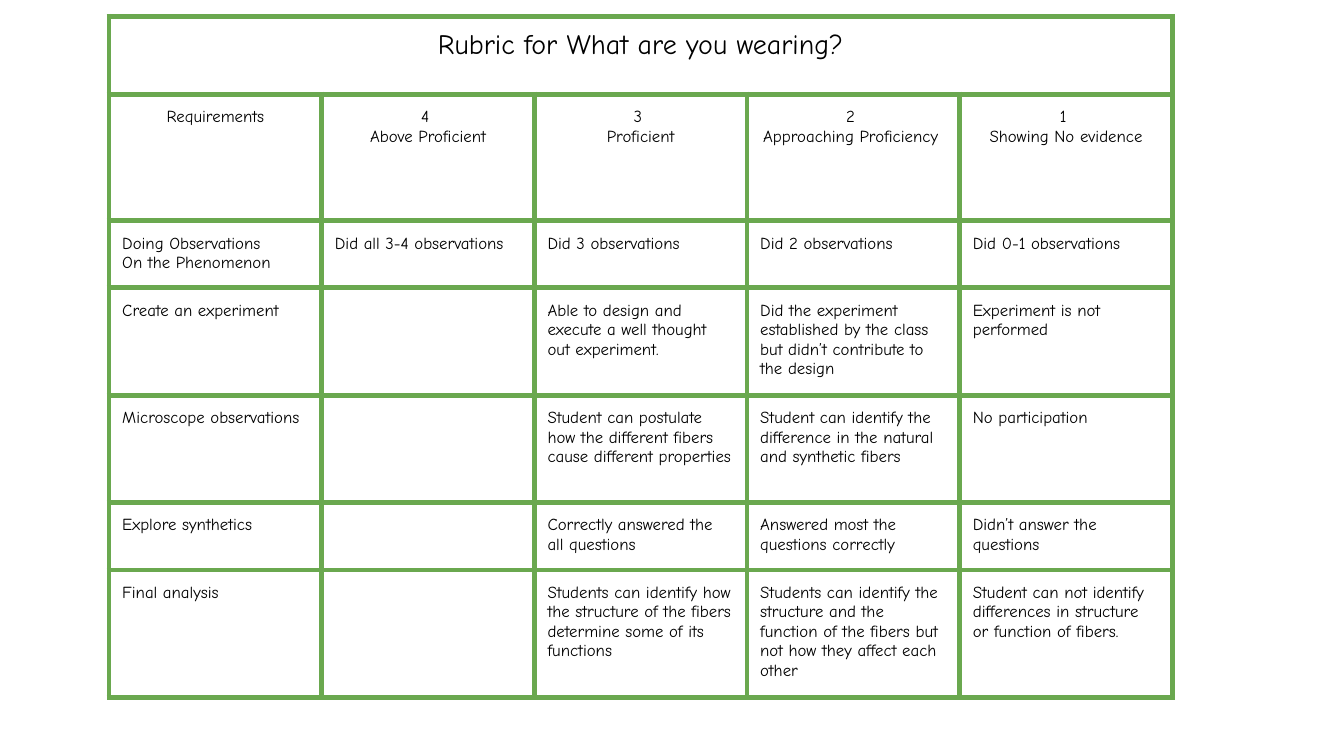
from dataclasses import dataclass

from lxml.etree import SubElement
from pptx import Presentation
from pptx.dml.color import RGBColor
from pptx.enum.text import PP_ALIGN
from pptx.oxml import parse_xml
from pptx.oxml.ns import nsdecls, qn
from pptx.util import Cm, Pt


@dataclass(frozen=True)
class Theme:
    font: str = "Comic Neue"
    ink: str = "000000"
    line: str = "6AA84F"
    width: int = Pt(3)
    title: int = 15
    body: int = 9
    inset: int = Cm(0.25)


TITLE = "Rubric for What are you wearing?"
HEADS = [
    "Requirements",
    "4 \nAbove Proficient",
    "3 \nProficient",
    "2 \nApproaching Proficiency ",
    "1 \nShowing No evidence",
]
ROWS = [
    ["Doing Observations\nOn the Phenomenon", "Did all 3-4 observations",
     "Did 3 observations", "Did 2 observations", "Did 0-1 observations"],
    ["Create an experiment", "",
     "Able to design and execute a well thought out experiment.",
     "Did the experiment established by the class but didn’t contribute to the design",
     "Experiment is not performed"],
    ["Microscope observations", "",
     "Student can postulate how the different fibers cause different properties",
     "Student can identify the difference in the natural and synthetic fibers",
     "No participation"],
    ["Explore synthetics", "",
     "Correctly answered the all questions",
     "Answered most the questions correctly",
     "Didn’t answer the questions"],
    ["Final analysis", "",
     "Students can identify how the structure of the fibers determine some of its functions",
     "Students can identify the structure and the function of the fibers but not how they affect each other",
     "Student can not identify differences in structure or function of fibers."],
]
HEIGHTS = [1.47, 2.39, 1.27, 2.03, 2.03, 1.27, 2.41]
WIDTH = 4.02


def write(frame, text, *, font, size, color, align=PP_ALIGN.LEFT):
    frame.word_wrap = True
    for i, line in enumerate(text.split("\n")):
        para = frame.paragraphs[0] if i == 0 else frame.add_paragraph()
        para.alignment = align
        if not line:
            continue
        run = para.add_run()
        run.text = line
        run.font.name = font
        run.font.size = Pt(size)
        run.font.color.rgb = RGBColor.from_string(color)


class Page:
    def __init__(self, deck, theme):
        self.theme = theme
        self.slide = deck.slides.add_slide(deck.slide_layouts[6])

    def border(self, cell):
        props = cell._tc.get_or_add_tcPr()
        for i, side in enumerate(("lnL", "lnR", "lnT", "lnB")):
            edge = parse_xml(f'<a:{side} {nsdecls("a")} w="{self.theme.width}"/>')
            fill = SubElement(edge, qn("a:solidFill"))
            SubElement(fill, qn("a:srgbClr"), val=self.theme.line)
            props.insert(i, edge)

    def cell(self, cell, text, **style):
        cell.fill.background()
        cell.margin_left = cell.margin_right = self.theme.inset
        cell.margin_top = cell.margin_bottom = self.theme.inset
        self.border(cell)
        write(cell.text_frame, text, font=self.theme.font,
              color=self.theme.ink, **style)

    def table(self, left, top, title, heads, rows):
        count = len(heads)
        grid = [[title] + [""] * (count - 1), heads, *rows]
        table = self.slide.shapes.add_table(
            len(grid), count, Cm(left), Cm(top),
            Cm(WIDTH * count), Cm(sum(HEIGHTS))).table
        table.first_row = table.horz_banding = False
        for col in table.columns:
            col.width = Cm(WIDTH)
        for r, (texts, height) in enumerate(zip(grid, HEIGHTS)):
            table.rows[r].height = Cm(height)
            size = self.theme.title if r == 0 else self.theme.body
            align = PP_ALIGN.CENTER if r < 2 else PP_ALIGN.LEFT
            for c, text in enumerate(texts):
                self.cell(table.cell(r, c), text, size=size, align=align)
        table.cell(0, 0).merge(table.cell(0, count - 1))


def main():
    deck = Presentation()
    deck.slide_width, deck.slide_height = Cm(25.4), Cm(14.29)
    page = Page(deck, Theme())
    page.table(2.06, 0.31, TITLE, HEADS, ROWS)
    deck.save("out.pptx")


if __name__ == "__main__":
    main()
